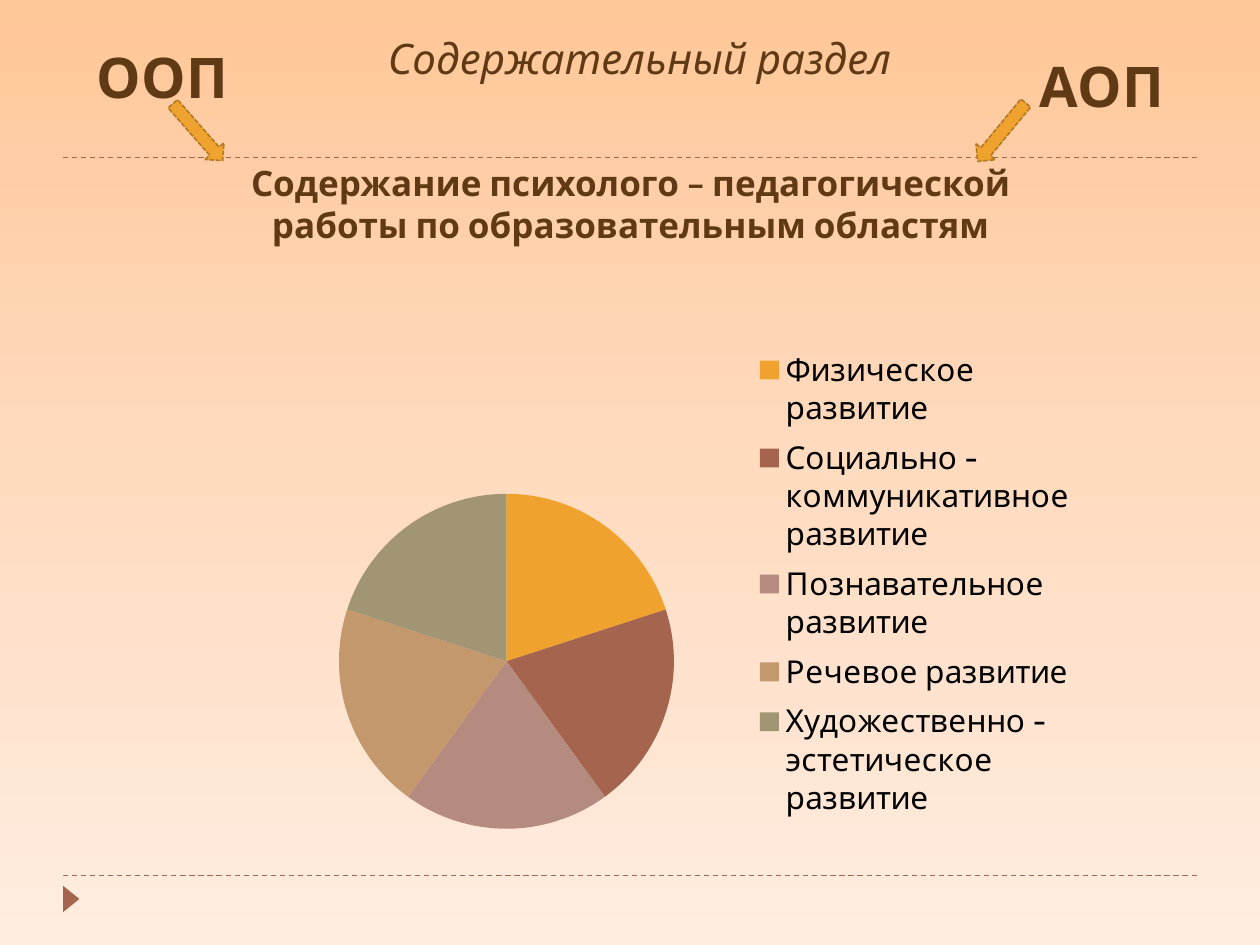
"""Build the content-section slide with its pie of development areas."""
from copy import deepcopy

from lxml import etree
from pptx import Presentation
from pptx import util as u
from pptx.chart import data
from pptx.dml.color import RGBColor
from pptx.enum import chart as ch, dml, shapes, text
from pptx.oxml import ns

FONT = "Cabin"
BROWN = RGBColor(0x60, 0x3A, 0x14)
RUST = RGBColor(0xA5, 0x64, 0x4E)
AMBER = RGBColor(0xF0, 0xA2, 0x2E)
OCHRE = RGBColor(0xB2, 0x78, 0x22)
ROSE = RGBColor(0xB5, 0x8B, 0x80)
TAN = RGBColor(0xC3, 0x98, 0x6D)
SAGE = RGBColor(0xA1, 0x95, 0x74)
BLACK = RGBColor(0, 0, 0)
SKY = [
    (0, RGBColor(0xFF, 0xC7, 0x98)),
    (0.5, RGBColor(0xFF, 0xDB, 0xC0)),
    (1, RGBColor(0xFF, 0xED, 0xE0)),
]
AREAS = [
    ("Физическое развитие", AMBER),
    ("Социально - коммуникативное развитие", RUST),
    ("Познавательное развитие", ROSE),
    ("Речевое развитие", TAN),
    ("Художественно - эстетическое развитие", SAGE),
]


def box(at):
    """Turn four inch values into lengths."""
    return [u.Inches(n) for n in at]


def paint(slide):
    """Fill the background with the vertical gradient."""
    fill = slide.background.fill
    fill.gradient()
    fill.gradient_angle = 270
    stops = slide.element.find(".//" + ns.qn("a:gsLst"))
    stops.append(deepcopy(stops[0]))
    for stop, (pos, color) in zip(fill.gradient_stops, SKY):
        stop.position = pos
        stop.color.rgb = color


def rule(slide, y):
    """Draw a dashed line across the slide."""
    line = slide.shapes.add_connector(
        shapes.MSO_CONNECTOR.STRAIGHT, *box((0.5, y, 9.5, y)))
    line.line.color.rgb = RUST
    line.line.width = u.Pt(0.75)
    line.line.dash_style = dml.MSO_LINE.DASH
    etree.SubElement(line.element.spPr, ns.qn("a:effectLst"))


def mark(slide, kind, at, turn, color, edge=None):
    """Add a turned shape, with a dotted edge if one is given."""
    item = slide.shapes.add_shape(kind, *box(at))
    item.shadow.inherit = False
    item.rotation = turn
    item.fill.solid()
    item.fill.fore_color.rgb = color
    if edge is None:
        item.line.fill.background()
    else:
        item.line.color.rgb = edge
        item.line.width = u.Pt(0.9)
        item.line.dash_style = dml.MSO_LINE.SQUARE_DOT


def label(slide, at, words, size, bold=False, slant=False, align=None):
    """Add a text box with one run."""
    frame = slide.shapes.add_textbox(*box(at)).text_frame
    frame.word_wrap = True
    frame.auto_size = text.MSO_AUTO_SIZE.SHAPE_TO_FIT_TEXT
    para = frame.paragraphs[0]
    para.alignment = align
    run = para.add_run()
    run.text = words
    font = run.font
    font.name, font.size = FONT, u.Pt(size)
    font.bold, font.italic = bold, slant
    font.color.rgb = BROWN


def place(chart, part, at, index, inner=False):
    """Fix a chart part at fractions of the chart."""
    host = chart.element.find(".//" + ns.qn(part))
    for old in host.findall(ns.qn("c:layout")):
        host.remove(old)
    layout = etree.Element(ns.qn("c:layout"))
    host.insert(index, layout)
    manual = etree.SubElement(layout, ns.qn("c:manualLayout"))
    parts = [("layoutTarget", "inner")] if inner else []
    parts += [("xMode", "edge"), ("yMode", "edge"), *zip("xywh", at)]
    for tag, val in parts:
        etree.SubElement(manual, ns.qn("c:" + tag)).set("val", str(val))


def pie(slide, at):
    """Add the pie of equal areas with its legend."""
    table = data.CategoryChartData()
    table.categories = [name for name, _ in AREAS]
    table.add_series("Series 1", [20] * len(AREAS))
    chart = slide.shapes.add_chart(
        ch.XL_CHART_TYPE.PIE, *box(at), table).chart
    chart.has_title = False
    chart.font.name, chart.font.size = FONT, u.Pt(18)
    chart.font.color.rgb = BLACK
    chart.has_legend = True
    chart.legend.position = ch.XL_LEGEND_POSITION.RIGHT
    chart.legend.include_in_layout = False
    plot = chart.plots[0]
    plot.vary_by_categories = True
    for i, (_, color) in enumerate(AREAS):
        fill = plot.series[0].points[i].format.fill
        fill.solid()
        fill.fore_color.rgb = color
    place(chart, "c:plotArea", (0.12, 0.33, 0.53, 0.65), 0, inner=True)
    place(chart, "c:legend", (0.65, 0.03, 0.34, 0.95), 1)


def main():
    """Build and save the slide."""
    deck = Presentation()
    deck.slide_width, deck.slide_height = u.Inches(10), u.Inches(7.5)
    slide = deck.slides.add_slide(deck.slide_layouts[6])
    kind = shapes.MSO_SHAPE
    mid = text.PP_ALIGN.CENTER
    paint(slide)
    for y in (6.95, 1.25):
        rule(slide, y)
    mark(slide, kind.ISOSCELES_TRIANGLE, (0.46, 7.07, 0.21, 0.13), 90, RUST)
    label(slide, (8.15, 0.36, 1.26, 0.64), "АОП", 32, bold=True)
    label(slide, (0.67, 0.29, 1.34, 0.64), "ООП", 32, bold=True)
    label(slide, (2.95, 0.21, 4.33, 0.5), "Содержательный раздел ", 24,
          slant=True, align=mid)
    label(slide, (1.54, 1.23, 6.93, 0.77),
          "Содержание психолого – педагогической работы "
          "по образовательным областям", 20, bold=True, align=mid)
    for x, turn in ((7.85, 39.5), (1.47, 318.7)):
        mark(slide, kind.DOWN_ARROW, (x, 0.75, 0.2, 0.6), turn, AMBER, OCHRE)
    pie(slide, (1.14, 2.57, 7.48, 4.09))
    deck.save("out.pptx")


if __name__ == "__main__":
    main()
